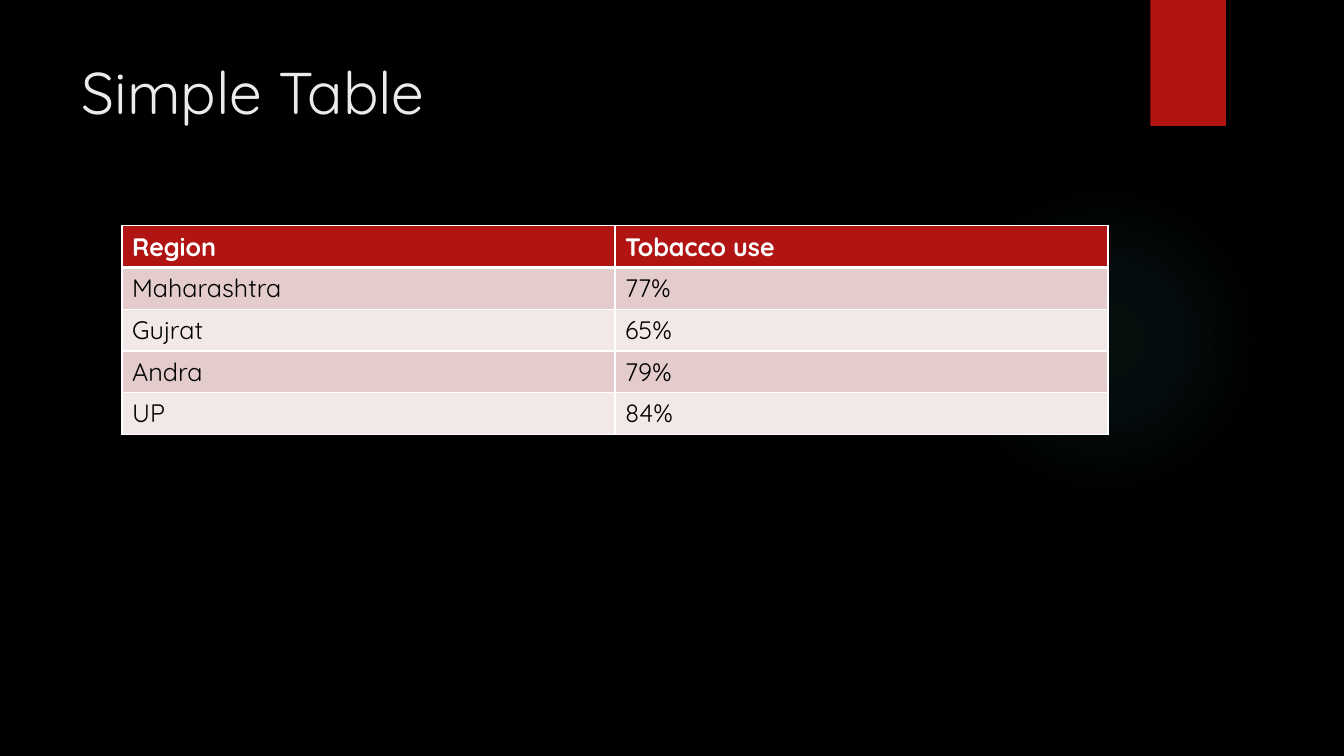
"""Build a dark slide with a title and a table of tobacco use by region."""
from lxml import etree
from pptx import Presentation
from pptx import util as u
from pptx.dml.color import RGBColor
from pptx.enum import shapes, text
from pptx.oxml import parse_xml
from pptx.oxml.ns import nsdecls, qn

THEME = {
    "font": "Quicksand", "title_size": 42, "table_size": 18,
    "background": "000000", "title": "EBEBEB", "accent": "B01513", "glow": "50B9C1",
    "header_text": "FFFFFF", "body_text": "000000", "border": "FFFFFF",
    "bands": ["E4CCCC", "F2E8E7"],
}
ROWS = [
    ("Region", "Tobacco use"),
    ("Maharashtra", "77%"),
    ("Gujrat", "65%"),
    ("Andra", "79%"),
    ("UP", "84%"),
]
GLOW_STOPS = [(0, 7), (36, 6), (69, 0)]


def style_text(para, size, color, bold=False):
    formats = {"name": THEME["font"], "size": u.Pt(size), "bold": bold}
    for span in para.runs:
        for key, value in formats.items():
            setattr(span.font, key, value)
        span.font.color.rgb = RGBColor.from_string(color)


def add_border(cell, side, position, width):
    props = cell._tc.get_or_add_tcPr()
    line = etree.Element(qn(f"a:ln{side}"), w=str(u.Pt(width)))
    fill = etree.SubElement(line, qn("a:solidFill"))
    etree.SubElement(fill, qn("a:srgbClr"), val=THEME["border"])
    props.insert(position, line)


deck = Presentation()
deck.slide_width, deck.slide_height = u.Inches(13.33), u.Inches(7.5)
page = deck.slides.add_slide(deck.slide_layouts[5])
page.background.fill.solid()
page.background.fill.fore_color.rgb = RGBColor.from_string(THEME["background"])

glow = page.shapes.add_shape(
    shapes.MSO_SHAPE.OVAL, u.Inches(9.41), u.Inches(1.83), u.Inches(3.08), u.Inches(3.08))
stops = "".join(
    f'<a:gs pos="{place * 1000}"><a:srgbClr val="{THEME["glow"]}">'
    f'<a:alpha val="{alpha * 1000}"/></a:srgbClr></a:gs>'
    for place, alpha in GLOW_STOPS)
gradient = parse_xml(
    f'<a:gradFill {nsdecls("a")}><a:gsLst>{stops}</a:gsLst><a:path path="circle">'
    '<a:fillToRect l="50000" t="50000" r="50000" b="50000"/></a:path></a:gradFill>')
glow._element.spPr.find(qn("a:prstGeom")).addnext(gradient)

tab = page.shapes.add_shape(
    shapes.MSO_SHAPE.RECTANGLE, u.Inches(11.41), 0, u.Inches(0.75), u.Inches(1.25))
tab.fill.solid()
tab.fill.fore_color.rgb = RGBColor.from_string(THEME["accent"])
for shape in (glow, tab):
    shape.shadow.inherit = False
    shape.line.fill.background()

title = page.shapes.title
page.shapes._spTree.append(title._element)
placement = {"left": 0.71, "top": 0.5, "width": 10.29, "height": 1.53}
for key, value in placement.items():
    setattr(title, key, u.Inches(value))
title.text_frame.text = "Simple Table"
title_format = {"vertical_anchor": text.MSO_ANCHOR.TOP, "word_wrap": True,
                "auto_size": text.MSO_AUTO_SIZE.NONE}
for key, value in title_format.items():
    setattr(title.text_frame, key, value)
title_para = title.text_frame.paragraphs[0]
title_para.alignment = text.PP_ALIGN.LEFT
style_text(title_para, THEME["title_size"], THEME["title"])

table = page.shapes.add_table(
    len(ROWS), len(ROWS[0]), u.Inches(1.21), u.Inches(2.24), u.Inches(9.78), u.Inches(2.07)).table
for row in table.rows:
    row.height = u.Inches(0.414)
for row_index, values in enumerate(ROWS):
    header = row_index == 0
    fill_color = THEME["accent"] if header else THEME["bands"][(row_index - 1) % 2]
    text_color = THEME["header_text"] if header else THEME["body_text"]
    widths = {"L": 1, "R": 1, "T": 3 if row_index == 1 else 1, "B": 3 if header else 1}
    for column_index, value in enumerate(values):
        cell = table.cell(row_index, column_index)
        cell.text = value
        cell.fill.solid()
        cell.fill.fore_color.rgb = RGBColor.from_string(fill_color)
        style_text(cell.text_frame.paragraphs[0], THEME["table_size"], text_color, header)
        for position, (side, width) in enumerate(widths.items()):
            add_border(cell, side, position, width)

deck.save("out.pptx")
